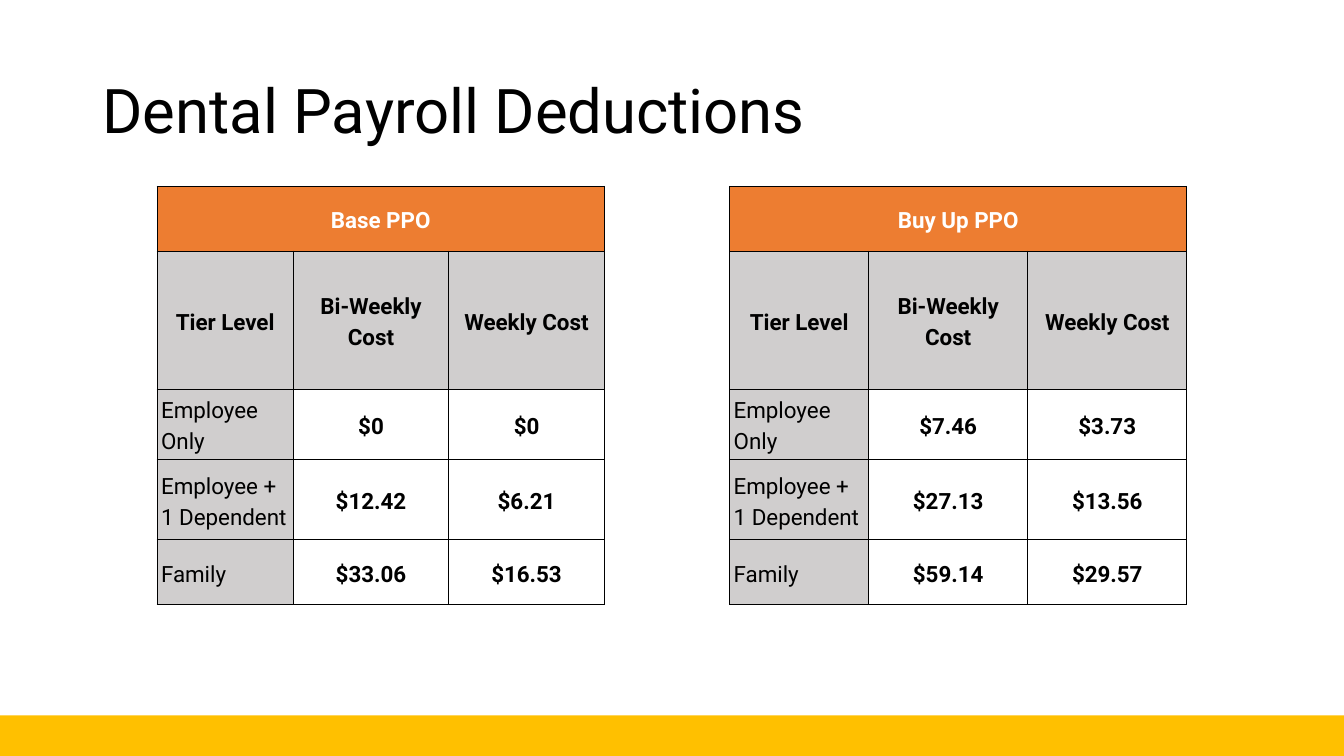
import lxml.etree
import pptx
import pptx.dml.color
import pptx.enum.shapes
import pptx.enum.text
import pptx.oxml.ns
import pptx.util

Cm = pptx.util.Cm
Pt = pptx.util.Pt
ANCHOR = pptx.enum.text.MSO_ANCHOR
ALIGN = pptx.enum.text.PP_ALIGN

ROW_HEIGHTS = [1.63, 3.48, 1.63, 2.03, 1.63]
HEADINGS = ["Tier Level", "Bi-Weekly Cost", "Weekly Cost"]
TIERS = ["Employee Only", "Employee + 1 Dependent", "Family"]
BASE_COSTS = [("$0", "$0"), ("$12.42", "$6.21"), ("$33.06", "$16.53")]
BUY_UP_COSTS = [("$7.46", "$3.73"), ("$27.13", "$13.56"), ("$59.14", "$29.57")]


def color(value):
    return pptx.dml.color.RGBColor.from_string(value)


class DeductionSlide:
    font = "Roboto"
    black = "000000"
    white = "FFFFFF"
    orange = "ED7D31"
    gray = "D0CECE"
    gold = "FFC000"

    def __init__(self, page):
        self.page = page

    def style_text(self, para, size, text_color, bold=False):
        for span in para.runs:
            span.font.name = self.font
            span.font.size = Pt(size)
            span.font.bold = bold
            span.font.color.rgb = color(text_color)

    def title(self, text, left, top, width, height):
        box = self.page.shapes.title
        box.left, box.top, box.width, box.height = map(Cm, (left, top, width, height))
        frame = box.text_frame
        frame.text = text
        frame.word_wrap = True
        frame.vertical_anchor = ANCHOR.MIDDLE
        para = frame.paragraphs[0]
        para.alignment = ALIGN.LEFT
        para.line_spacing = 0.9
        self.style_text(para, 44, self.black)

    def band(self, left, top, width, height):
        bar = self.page.shapes.add_shape(
            pptx.enum.shapes.MSO_SHAPE.RECTANGLE, *map(Cm, (left, top, width, height)))
        bar.shadow.inherit = False
        bar.fill.solid()
        bar.fill.fore_color.rgb = color(self.gold)
        bar.line.fill.background()

    def cell_borders(self, cell):
        properties = cell._tc.get_or_add_tcPr()
        for side in ("a:lnL", "a:lnR", "a:lnT", "a:lnB"):
            line = lxml.etree.SubElement(
                properties, pptx.oxml.ns.qn(side), w=str(int(Pt(1))))
            fill = lxml.etree.SubElement(line, pptx.oxml.ns.qn("a:solidFill"))
            lxml.etree.SubElement(fill, pptx.oxml.ns.qn("a:srgbClr"), val=self.black)

    def cell(self, cell, text, row, column):
        """Fill one cell, styled by its place in the table."""
        is_cost = row > 1 and column > 0
        is_tier = row > 1 and column == 0
        self.cell_borders(cell)
        if is_cost:
            cell.fill.background()
        else:
            cell.fill.solid()
            cell.fill.fore_color.rgb = color(self.orange if row == 0 else self.gray)
        cell.vertical_anchor = ANCHOR.MIDDLE
        cell.margin_left = cell.margin_right = Cm(0.1)
        cell.margin_top = cell.margin_bottom = Cm(0.1)
        cell.text_frame.text = text
        para = cell.text_frame.paragraphs[0]
        para.alignment = ALIGN.LEFT if is_tier else ALIGN.CENTER
        para.line_spacing = 1.19
        para.space_after = Pt(14 if is_cost else 6)
        self.style_text(para, 16, self.white if row == 0 else self.black, not is_tier)

    def plan_table(self, plan, costs, left, top, column_widths):
        rows = [[plan, "", ""], HEADINGS]
        rows += [[tier, *pair] for tier, pair in zip(TIERS, costs)]
        table = self.page.shapes.add_table(
            len(rows), len(HEADINGS), Cm(left), Cm(top),
            Cm(sum(column_widths)), Cm(sum(ROW_HEIGHTS))).table
        for column, width in zip(table.columns, column_widths):
            column.width = Cm(width)
        for row, height in zip(table.rows, ROW_HEIGHTS):
            row.height = Cm(height)
        for r, texts in enumerate(rows):
            for c, text in enumerate(texts):
                self.cell(table.cell(r, c), text, r, c)
        table.cell(0, 0).merge(table.cell(0, len(HEADINGS) - 1))


def main():
    deck = pptx.Presentation()
    deck.slide_width, deck.slide_height = Cm(33.87), Cm(19.05)
    slide = DeductionSlide(deck.slides.add_slide(deck.slide_layouts[5]))
    slide.title("Dental Payroll Deductions", 2.33, 1.01, 29.21, 3.68)
    slide.band(0, 18.03, 33.87, 1.02)
    slide.plan_table("Buy Up PPO", BUY_UP_COSTS, 18.39, 4.7, [3.5, 4.01, 4.01])
    slide.plan_table("Base PPO", BASE_COSTS, 3.96, 4.7, [3.43, 3.92, 3.92])
    deck.save("out.pptx")


if __name__ == "__main__":
    main()
